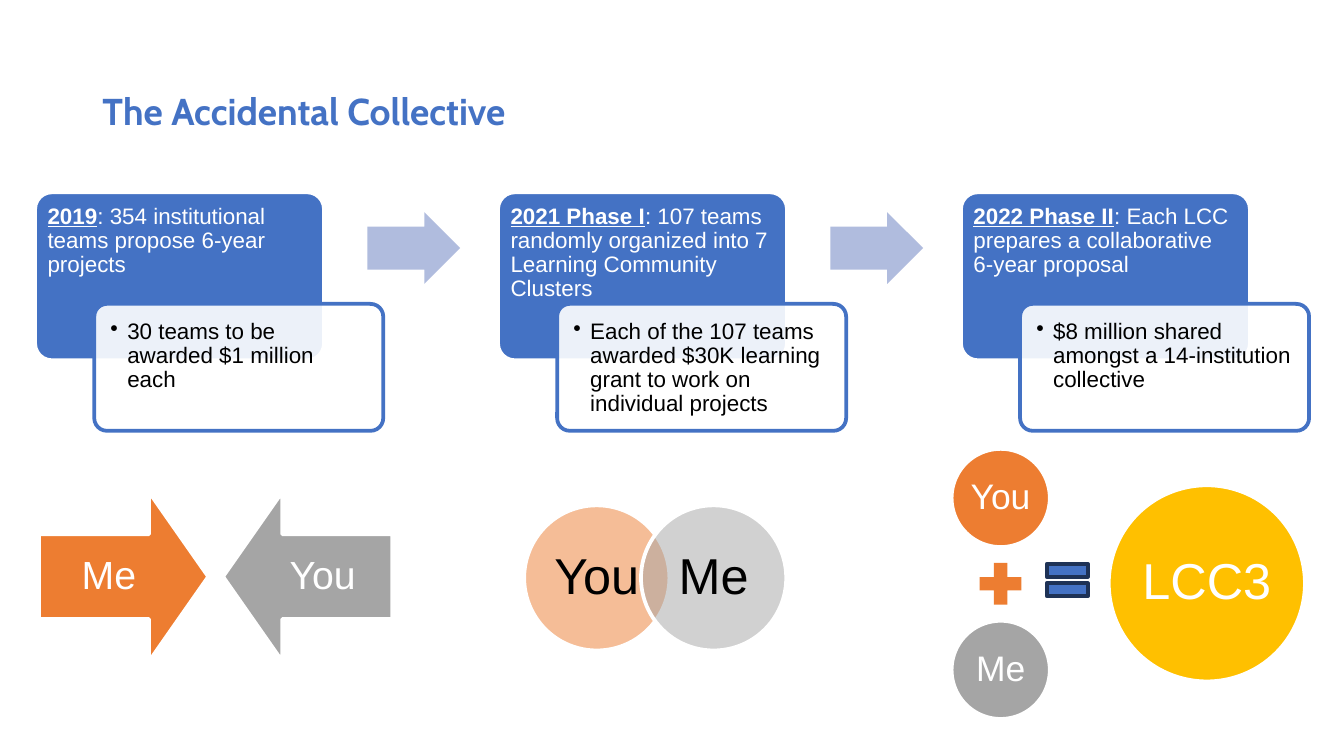
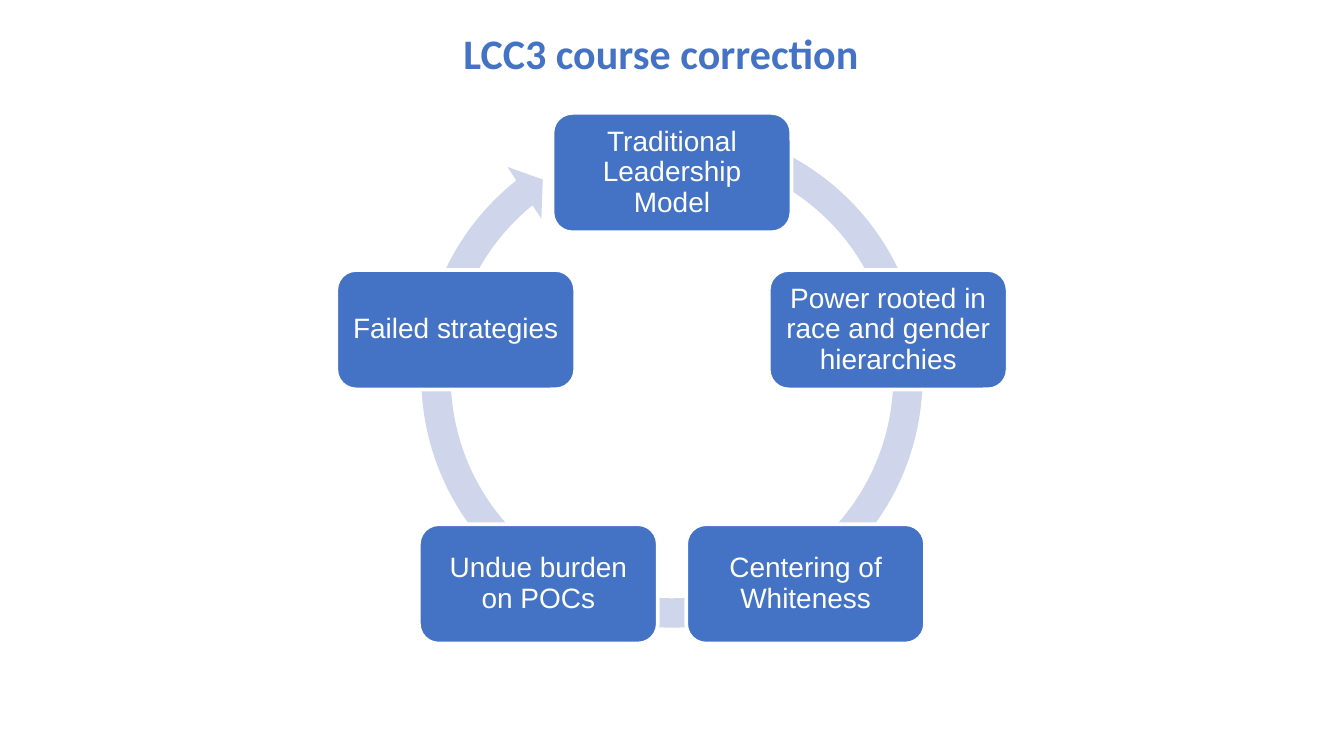
import math
from dataclasses import dataclass
from typing import Any, Optional

from lxml import etree
from pptx import Presentation
from pptx.dml.color import RGBColor
from pptx.enum.shapes import MSO_SHAPE
from pptx.enum.text import MSO_ANCHOR, MSO_AUTO_SIZE, PP_ALIGN
from pptx.oxml.ns import qn
from pptx.util import Pt

ROUND_RECT = MSO_SHAPE.ROUNDED_RECTANGLE
RIGHT_ARROW = MSO_SHAPE.RIGHT_ARROW
DOWN_ARROW = MSO_SHAPE.DOWN_ARROW
CIRCULAR_ARROW = MSO_SHAPE.CIRCULAR_ARROW
ELLIPSE = MSO_SHAPE.OVAL
PLUS = MSO_SHAPE.MATH_PLUS
EQUAL = MSO_SHAPE.MATH_EQUAL
TOP, MIDDLE = MSO_ANCHOR.TOP, MSO_ANCHOR.MIDDLE
LEFT, CENTER = PP_ALIGN.LEFT, PP_ALIGN.CENTER

COLORS = {
    "blue": "4472C4",
    "navy": "1E3256",
    "periwinkle": "B0BCDE",
    "mist": "CFD5EA",
    "orange": "ED7D31",
    "gray": "A5A5A5",
    "gold": "FFC000",
    "white": "FFFFFF",
    "black": "000000",
}
TITLE_ONLY_LAYOUT = 5
LINE_WIDTH = 2
LINE_SPACING = 0.9


@dataclass(frozen=True)
class Box:
    """Left, top, width and height in points."""
    left: float
    top: float
    width: float
    height: float

    def lengths(self) -> tuple:
        return Pt(self.left), Pt(self.top), Pt(self.width), Pt(self.height)

    def inset(self, margin: float) -> "Box":
        return Box(self.left + margin, self.top + margin,
                   self.width - 2 * margin, self.height - 2 * margin)


@dataclass(frozen=True)
class Phase:
    name: str
    summary: str
    detail: str


@dataclass(frozen=True)
class Disc:
    text: str
    left: float
    top: float
    diameter: float
    fill: str
    size: float
    color: str = "white"
    opacity: Optional[int] = None


@dataclass(frozen=True)
class OpposedArrow:
    text: str
    left: float
    label_left: float
    rotation: int
    fill: str


PHASES = [
    Phase("2019", ": 354 institutional teams propose 6-year projects",
          "30 teams to be awarded $1 million each"),
    Phase("2021 Phase I",
          ": 107 teams randomly organized into 7 Learning Community Clusters",
          "Each of the 107 teams awarded $30K learning grant to work on individual projects"),
    Phase("2022 Phase II", ": Each LCC prepares a collaborative 6-year proposal",
          "$8 million shared amongst a 14-institution collective"),
]
PHASE_LEFT, PHASE_TOP, PHASE_PITCH = 18.8, 103, 248
PHASE_WIDTH = 154.8

OPPOSED_ARROWS = [
    OpposedArrow("Me", 20.9, 20.9, 270, "orange"),
    OpposedArrow("You", 119.5, 135.4, 90, "gray"),
]
OVERLAP = [
    Disc("You", 280.8, 270.7, 77.8, "orange", 27, "black", 50),
    Disc("Me", 343.4, 270.7, 77.8, "gray", 27, "black", 50),
]
SUM = [
    Disc("You", 509.8, 240.5, 52.6, "orange", 19),
    Disc("Me", 509.8, 332.6, 52.6, "gray", 19),
    Disc("LCC3", 594, 260, 105.1, "gold", 27),
]

CYCLE_STEPS = [
    "Traditional Leadership Model",
    "Power rooted in race and gender hierarchies",
    "Centering of Whiteness",
    "Undue burden on POCs",
    "Failed strategies",
]
CYCLE_X, CYCLE_Y, CYCLE_RADIUS = 360, 214.3, 121.8
STEP_WIDTH, STEP_HEIGHT = 128, 64


def rgb(color: str) -> RGBColor:
    return RGBColor.from_string(COLORS[color])


def font_format(run: Any, color: str, **values: Any) -> None:
    for attribute, value in values.items():
        setattr(run.font, attribute, value)
    run.font.color.rgb = rgb(color)


def frame_format(frame: Any, anchor: Any, wrap: bool, margins: tuple) -> None:
    sides = ("margin_left", "margin_top", "margin_right", "margin_bottom")
    values = dict(zip(sides, map(Pt, margins)))
    values |= {"auto_size": MSO_AUTO_SIZE.NONE, "word_wrap": wrap,
               "vertical_anchor": anchor}
    for attribute, value in values.items():
        setattr(frame, attribute, value)


def add_figure(shapes: Any, kind: Any, box: Box, fill: str,
               line: Optional[str] = None, adjustments: tuple = (),
               opacity: Optional[int] = None, rotation: float = 0) -> None:
    """Draw a preset shape; opacity is a percentage."""
    figure = shapes.add_shape(kind, *box.lengths())
    figure.shadow.inherit = False
    figure.rotation = rotation
    for index, value in enumerate(adjustments):
        figure.adjustments[index] = value
    figure.fill.solid()
    figure.fill.fore_color.rgb = rgb(fill)
    if opacity is not None:
        tint = figure.element.spPr.find(f"{qn('a:solidFill')}/{qn('a:srgbClr')}")
        etree.SubElement(tint, qn("a:alpha"), val=str(opacity * 1000))
    if line:
        figure.line.color.rgb = rgb(line)
        figure.line.width = Pt(LINE_WIDTH)
    else:
        figure.line.fill.background()


def add_label(shapes: Any, box: Box, runs: list, size: float,
              color: str = "white", align: Any = CENTER, anchor: Any = MIDDLE,
              margins: tuple = (4.3,) * 4) -> Any:
    """Write (text, emphasized) runs as one paragraph and return it."""
    frame = shapes.add_textbox(*box.lengths()).text_frame
    several_words = any(" " in text for text, _ in runs)
    frame_format(frame, anchor, several_words, margins)
    paragraph = frame.paragraphs[0]
    paragraph.alignment = align
    paragraph.line_spacing = LINE_SPACING
    for text, emphasized in runs:
        run = paragraph.add_run()
        run.text = text
        font_format(run, color, name="Arial", size=Pt(size),
                    bold=emphasized, underline=emphasized)
    return paragraph


def add_bullet(paragraph: Any, indent: float) -> None:
    paragraph.level = 1
    properties = paragraph._p.get_or_add_pPr()
    properties.set("marL", str(Pt(indent)))
    properties.set("indent", str(-Pt(indent)))
    bullet_color = etree.SubElement(properties, qn("a:buClr"))
    etree.SubElement(bullet_color, qn("a:srgbClr"), val=COLORS["black"])
    etree.SubElement(properties, qn("a:buChar"), char="•")


def add_titled_slide(deck: Any, text: str, box: Box, font: str, size: float,
                     align: Any) -> Any:
    slide = deck.slides.add_slide(deck.slide_layouts[TITLE_ONLY_LAYOUT])
    title = slide.shapes.title
    title.left, title.top, title.width, title.height = box.lengths()
    frame_format(title.text_frame, MIDDLE, True, (5.4, 2.7, 5.4, 2.7))
    paragraph = title.text_frame.paragraphs[0]
    paragraph.alignment = align
    paragraph.line_spacing = LINE_SPACING
    run = paragraph.add_run()
    run.text = text
    font_format(run, "blue", name=font, size=Pt(size), bold=True)
    return slide


def add_phase(shapes: Any, phase: Phase, left: float) -> None:
    add_figure(shapes, ROUND_RECT, Box(left, PHASE_TOP, PHASE_WIDTH, 90),
               "blue", "white", (0.1,))
    add_label(shapes, Box(left, PHASE_TOP, PHASE_WIDTH, 60),
              [(phase.name, True), (phase.summary, False)], 12,
              align=LEFT, anchor=TOP, margins=(6.7, 6.7, 6.7, 3.6))
    detail = Box(left + 31.7, PHASE_TOP + 59.8, PHASE_WIDTH, 68)
    add_figure(shapes, ROUND_RECT, detail, "white", "blue", (0.1,), opacity=90)
    add_bullet(add_label(shapes, detail.inset(2), [(phase.detail, False)], 12,
                         "black", LEFT, TOP, (6.7,) * 4), 9)


def add_disc(shapes: Any, disc: Disc) -> None:
    circle = Box(disc.left, disc.top, disc.diameter, disc.diameter)
    add_figure(shapes, ELLIPSE, circle, disc.fill, "white", opacity=disc.opacity)
    corner = disc.diameter * (1 - math.sqrt(0.5)) / 2
    add_label(shapes, circle.inset(corner), [(disc.text, False)], disc.size,
              disc.color, margins=(3,) * 4)


def build_collective(deck: Any) -> None:
    slide = add_titled_slide(deck, "The Accidental Collective",
                             Box(49.5, 21.6, 621, 78.3), "Cabin", 20, LEFT)

    timeline = slide.shapes.add_group_shape().shapes
    for index, phase in enumerate(PHASES):
        left = PHASE_LEFT + index * PHASE_PITCH
        add_phase(timeline, phase, left)
        if index < len(PHASES) - 1:
            add_figure(timeline, RIGHT_ARROW, Box(left + 178, 113.7, 49.7, 38.4),
                       "periwinkle", adjustments=(0.6, 0.5))

    opposition = slide.shapes.add_group_shape().shapes
    for arrow in OPPOSED_ARROWS:
        add_figure(opposition, DOWN_ARROW, Box(arrow.left, 263.6, 90.7, 90.7),
                   arrow.fill, "white", (0.5, 0.35), rotation=arrow.rotation)
        add_label(opposition, Box(arrow.label_left, 286.3, 74.9, 45.4),
                  [(arrow.text, False)], 21, margins=(11.5,) * 4)

    for discs in (OVERLAP, SUM):
        group = slide.shapes.add_group_shape().shapes
        for disc in discs:
            add_disc(group, disc)
    add_figure(group, PLUS, Box(520.8, 297.5, 30.5, 30.5), "orange")
    add_figure(slide.shapes, EQUAL, Box(556.8, 296, 30, 29.5), "blue", "navy")


def build_course_correction(deck: Any) -> None:
    slide = add_titled_slide(deck, "LCC3 course correction ",
                             Box(79.2, 15.8, 555, 28), "Calibri", 22.5, CENTER)
    cycle = slide.shapes.add_group_shape().shapes
    add_figure(cycle, CIRCULAR_ARROW, Box(217, 59, 286, 286), "mist",
               adjustments=(0.055, 3.307, 138.781, 173.241, 0.058))
    for index, step in enumerate(CYCLE_STEPS):
        angle = math.tau * index / len(CYCLE_STEPS)
        node = Box(CYCLE_X + CYCLE_RADIUS * math.sin(angle) - STEP_WIDTH / 2,
                   CYCLE_Y - CYCLE_RADIUS * math.cos(angle) - STEP_HEIGHT / 2,
                   STEP_WIDTH, STEP_HEIGHT)
        add_figure(cycle, ROUND_RECT, node, "blue", "white")
        add_label(cycle, node.inset(3.1), [(step, False)], 15)


def main() -> None:
    deck = Presentation()
    deck.slide_width, deck.slide_height = Pt(720), Pt(405)
    build_collective(deck)
    build_course_correction(deck)
    deck.save("out.pptx")


if __name__ == "__main__":
    main()
